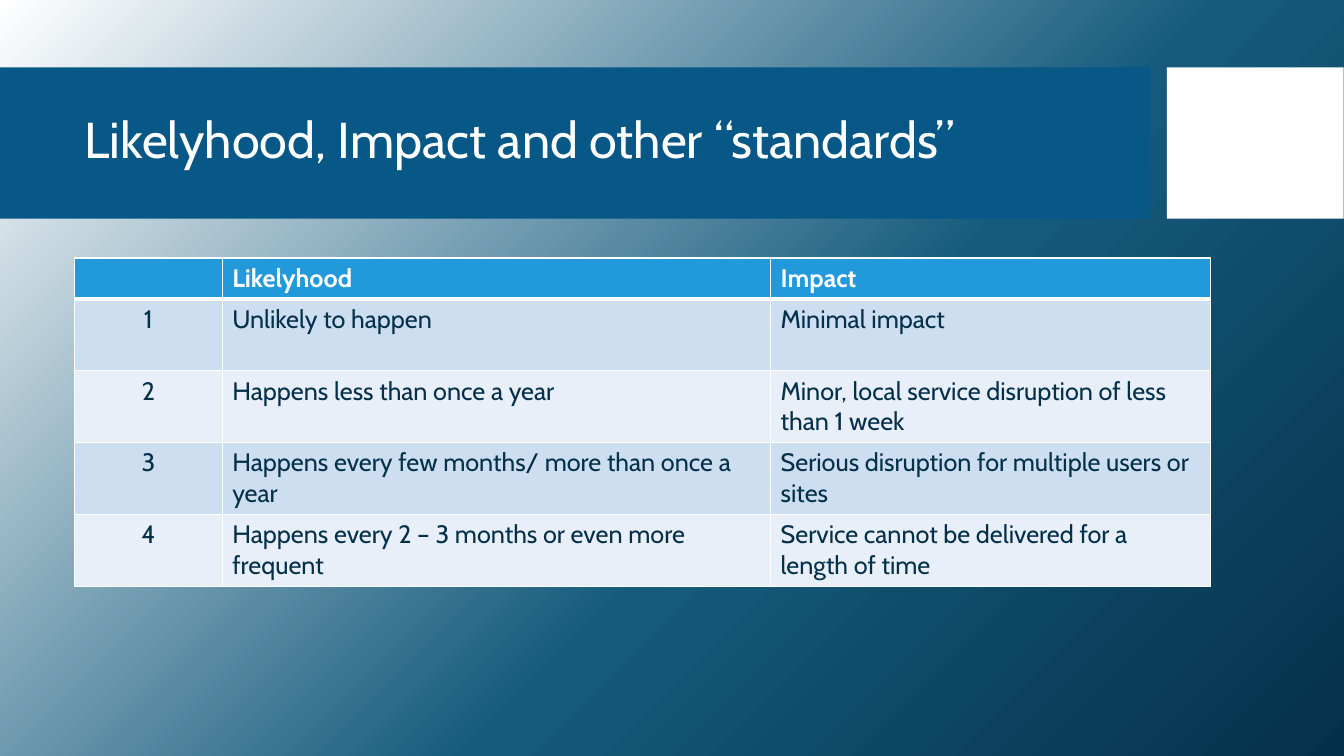
from copy import deepcopy

from lxml import etree
from pptx import Presentation
from pptx.dml.color import RGBColor
from pptx.enum.shapes import MSO_SHAPE
from pptx.enum.text import MSO_ANCHOR, MSO_AUTO_SIZE, PP_ALIGN
from pptx.oxml.ns import qn
from pptx.util import Cm, Pt

RECT = MSO_SHAPE.RECTANGLE
MIDDLE = MSO_ANCHOR.MIDDLE
FIXED = MSO_AUTO_SIZE.NONE
LEFT, CENTER = PP_ALIGN.LEFT, PP_ALIGN.CENTER

WHITE, NAVY, BLUE, SKY = "FFFFFF", "04304A", "075887", "2199DA"
BANDS = ("CDDEF1", "E8EFF8")
STOPS = ((0, WHITE), (0.58, "165B7D"), (1, NAVY))
ROWS = (
    ("", "Likelyhood", "Impact"),
    ("1", "Unlikely to happen", "Minimal impact"),
    ("2", "Happens less than once a year",
     "Minor, local service disruption of less than 1 week"),
    ("3", "Happens every few months/ more than once a year",
     "Serious disruption for multiple users or sites"),
    ("4", "Happens every 2 – 3 months or even more frequent",
     "Service cannot be delivered for a length of time"),
)


def paint(code):
    return RGBColor.from_string(code)


class Deck:
    """Holds the font and the current slide and draws its elements."""

    def __init__(self, font):
        self.font = font
        self.prs = Presentation()
        self.prs.slide_width, self.prs.slide_height = Cm(33.87), Cm(19.05)
        self.slide = self.prs.slides.add_slide(self.prs.slide_layouts[5])

    def backdrop(self, stops):
        fill = self.slide.background.fill
        fill.gradient()
        fill.gradient_angle = 315
        group = self.slide.element.find(".//" + qn("a:gsLst"))
        group.append(deepcopy(group[0]))
        for stop, (place, color) in zip(fill.gradient_stops, stops):
            stop.position = place
            stop.color.rgb = paint(color)

    def block(self, left, top, width, height, color):
        shape = self.slide.shapes.add_shape(
            RECT, Cm(left), Cm(top), Cm(width), Cm(height))
        shape.shadow.inherit = False
        shape.fill.solid()
        shape.fill.fore_color.rgb = paint(color)
        shape.line.fill.background()

    def style(self, para, size, color, bold=False, align=LEFT):
        para.alignment = align
        for run in para.runs:
            run.font.name = self.font
            run.font.size = Pt(size)
            run.font.bold = bold
            run.font.color.rgb = paint(color)

    def title(self, text, left, top, width, height):
        shape = self.slide.shapes.title
        shape.left, shape.top = Cm(left), Cm(top)
        shape.width, shape.height = Cm(width), Cm(height)
        frame = shape.text_frame
        frame.text = text
        frame.auto_size = FIXED
        frame.word_wrap = True
        frame.vertical_anchor = MIDDLE
        para = frame.paragraphs[0]
        para.line_spacing = 0.9
        self.style(para, 36, WHITE)
        shape.element.getparent().append(shape.element)

    def border(self, cell, head):
        props = cell._tc.get_or_add_tcPr()
        for side in "LRTB":
            thick = (head and side == "B") or (head is None and side == "T")
            line = etree.SubElement(
                props, qn("a:ln" + side), w=str(Pt(3 if thick else 1)))
            solid = etree.SubElement(line, qn("a:solidFill"))
            etree.SubElement(solid, qn("a:srgbClr"), val=WHITE)

    def table(self, rows, left, top, widths, heights):
        grid = self.slide.shapes.add_table(
            len(rows), len(widths), Cm(left), Cm(top),
            Cm(sum(widths)), Cm(sum(heights))).table
        grid.horz_banding = False
        for col, width in zip(grid.columns, widths):
            col.width = Cm(width)
        for i, (row, height) in enumerate(zip(rows, heights)):
            grid.rows[i].height = Cm(height)
            head = i == 0
            for j, text in enumerate(row):
                cell = grid.cell(i, j)
                cell.text = text
                self.border(cell, None if i == 1 else head)
                cell.fill.solid()
                cell.fill.fore_color.rgb = paint(
                    SKY if head else BANDS[(i - 1) % 2])
                self.style(cell.text_frame.paragraphs[0], 18,
                           WHITE if head else NAVY, head,
                           LEFT if j else CENTER)


def main():
    deck = Deck("Cabin")
    deck.backdrop(STOPS)
    deck.block(0, 1.7, 28.98, 3.81, BLUE)
    deck.block(29.41, 1.7, 4.45, 3.81, WHITE)
    deck.title("Likelyhood, Impact and other “standards”",
               1.88, 2.08, 26.7, 3)
    deck.table(ROWS, 1.88, 6.5, (3.72, 13.82, 11.08), [1.02] + [1.81] * 4)
    deck.prs.save("out.pptx")


if __name__ == "__main__":
    main()
